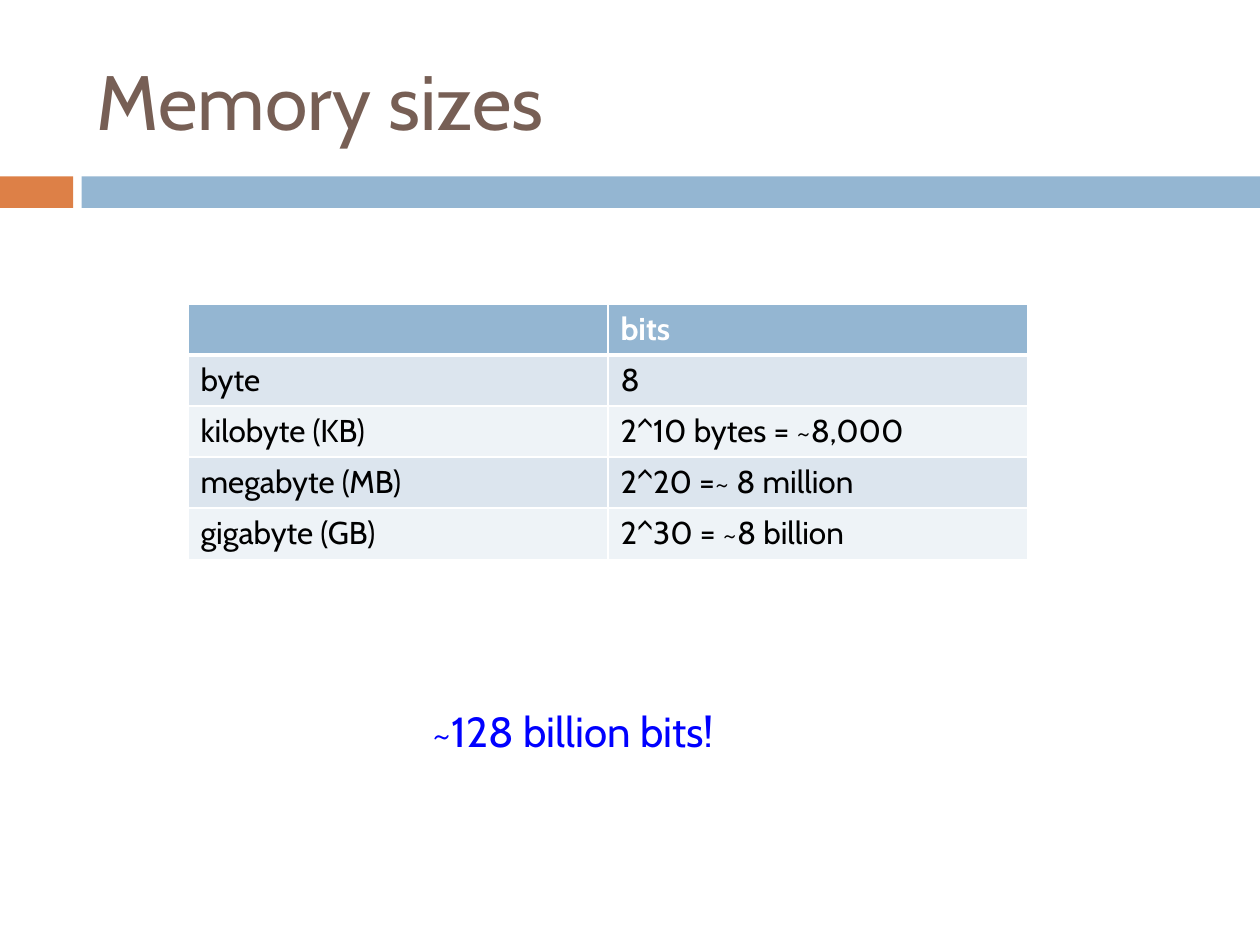
"""Build the slide on memory sizes."""
from lxml.etree import SubElement as Sub
from pptx import Presentation
from pptx.dml.color import RGBColor as Rgb
from pptx.enum.shapes import MSO_SHAPE as Shape
from pptx.enum.text import MSO_ANCHOR as Anchor
from pptx.oxml.ns import qn
from pptx.util import Pt

BLUE, WHITE = "94B6D2", "FFFFFF"
BANDS = ["EEF3F7", "DCE5EE"]
BARS = [(0, 41.9, "DD8047"), (46.6, 673.4, BLUE)]
ROWS = [
    ("", "bits"),
    ("byte", "8"),
    ("kilobyte (KB)", "2^10 bytes = ~8,000"),
    ("megabyte (MB)", "2^20 =~ 8 million"),
    ("gigabyte (GB)", "2^30 = ~8 billion"),
]
TEXTS = [
    ("Memory sizes", (48.2, 18, 642.2, 77.8), "775F55", {"size": Pt(44)},
     {"word_wrap": True, "vertical_anchor": Anchor.MIDDLE}),
    ("~128 billion bits!", (240, 399.6, 180, 36), "0000FF", {"size": Pt(24)},
     {"word_wrap": False}),
]
LEFT, TOP, WIDE, HIGH = 107.4, 173.6, 240, 29.2


def tint(hue):
    return Rgb.from_string(hue)


def paint(fill, hue):
    fill.solid()
    fill.fore_color.rgb = tint(hue)


def put(frame, text, hue, form):
    run = frame.paragraphs[0].add_run()
    run.text = text
    run.font.color.rgb = tint(hue)
    for key, val in {"name": "Cabin", **form}.items():
        setattr(run.font, key, val)


def edge(cell, row):
    props = cell._tc.get_or_add_tcPr()
    sizes = {"L": 1, "R": 1, "T": 3 if row == 1 else 1, "B": 3 if row == 0 else 1}
    for side, size in sizes.items():
        line = Sub(props, qn(f"a:ln{side}"), w=str(Pt(size)))
        Sub(Sub(line, qn("a:solidFill")), qn("a:srgbClr"), val=WHITE)


def main():
    deck = Presentation()
    deck.slide_width, deck.slide_height = Pt(720), Pt(540)
    slide = deck.slides.add_slide(deck.slide_layouts[6])
    shapes = slide.shapes

    for left, wide, hue in BARS:
        bar = shapes.add_shape(Shape.RECTANGLE, Pt(left), Pt(100.8), Pt(wide), Pt(18))
        bar.shadow.inherit = False
        bar.line.fill.background()
        paint(bar.fill, hue)

    for text, place, hue, form, look in TEXTS:
        frame = shapes.add_textbox(*map(Pt, place)).text_frame
        for key, val in look.items():
            setattr(frame, key, val)
        put(frame, text, hue, form)

    size = len(ROWS), len(ROWS[0])
    table = shapes.add_table(*size, Pt(LEFT), Pt(TOP),
                             Pt(WIDE * size[1]), Pt(HIGH * size[0])).table
    for row, texts in enumerate(ROWS):
        head = row == 0
        for col, text in enumerate(texts):
            cell = table.cell(row, col)
            edge(cell, row)
            paint(cell.fill, BLUE if head else BANDS[row % 2])
            if text:
                put(cell.text_frame, text, WHITE if head else "000000",
                    {"size": Pt(18), "bold": head})

    deck.save("out.pptx")


if __name__ == "__main__":
    main()
